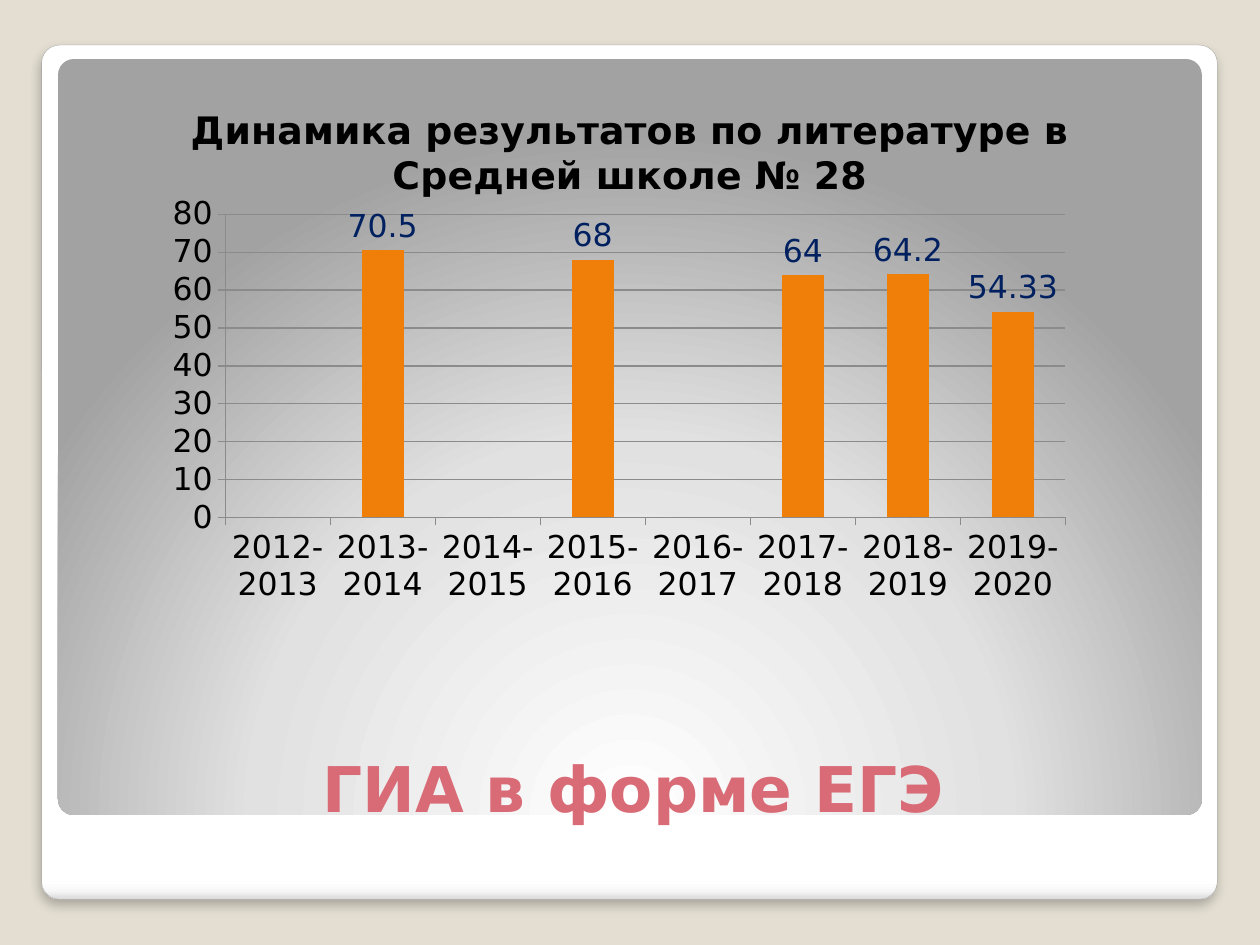
import pptx
import pptx.chart.data
import pptx.dml.color
import pptx.enum.chart
import pptx.enum.shapes
import pptx.enum.text
import pptx.oxml
import pptx.oxml.ns
import pptx.util
from pptx.util import Cm

FONT = "DejaVu Sans"
DRAWING = pptx.oxml.ns.nsdecls("a")
CHART = pptx.oxml.ns.nsdecls("c")
YEARS = [f"{year}-{year + 1}" for year in range(2012, 2020)]
SCORES = [None, 70.5, None, 68, None, 64, 64.2, 54.33]


def color(value):
    return pptx.dml.color.RGBColor.from_string(value)


def style_font(font, size, fill, bold=False):
    font.name = FONT
    font.size = pptx.util.Pt(size)
    font.bold = bold
    font.color.rgb = color(fill)


def write_text(frame, text, size=18, fill="000000", bold=False):
    para = frame.paragraphs[0]
    para.alignment = pptx.enum.text.PP_ALIGN.CENTER
    span = para.add_run()
    span.text = text
    style_font(span.font, size, fill, bold)


def add_panel(page, left, top, width, height, stops, direction):
    panel = page.shapes.add_shape(
        pptx.enum.shapes.MSO_SHAPE.ROUNDED_RECTANGLE,
        Cm(left), Cm(top), Cm(width), Cm(height))
    panel.adjustments[0] = 0.021
    panel.shadow.inherit = False
    panel.line.fill.background()
    marks = "".join(
        f'<a:gs pos="{position * 1000}"><a:srgbClr val="{shade}"/></a:gs>'
        for position, shade in stops)
    gradient = pptx.oxml.parse_xml(
        f'<a:gradFill {DRAWING} rotWithShape="1"><a:gsLst>{marks}</a:gsLst>'
        f'{direction}</a:gradFill>')
    geometry = panel._element.spPr.find(pptx.oxml.ns.qn("a:prstGeom"))
    geometry.addnext(gradient)
    return panel


def add_shadow(shape):
    effects = shape._element.spPr.find(pptx.oxml.ns.qn("a:effectLst"))
    effects.append(pptx.oxml.parse_xml(
        f'<a:outerShdw {DRAWING} blurRad="76200" dist="50800" dir="5400000" '
        'algn="t" rotWithShape="0"><a:srgbClr val="000000">'
        '<a:alpha val="25000"/></a:srgbClr></a:outerShdw>'))


def add_frame(page):
    card = add_panel(
        page, 0.84, 0.91, 23.7, 17.22,
        [(0, "FFFFFF"), (98, "FFFFFF"), (99, "F7F7F7"), (100, "DADADA")],
        '<a:lin ang="5400000" scaled="0"/>')
    card.line.color.rgb = color("A4A4A4")
    card.line.width = pptx.util.Pt(0.16)
    add_shadow(card)
    add_panel(
        page, 1.17, 1.19, 23.06, 15.24,
        [(0, "FFFFFF"), (55, "E1E1E1"), (100, "A2A2A2")],
        '<a:path path="circle"><a:fillToRect l="50000" t="175000" '
        'r="50000" b="-75000"/></a:path>')


def add_heading(page, text):
    box = page.shapes.add_textbox(Cm(1.4), Cm(13.84), Cm(22.73), Cm(2.92))
    box.text_frame.word_wrap = True
    box.text_frame.vertical_anchor = pptx.enum.text.MSO_ANCHOR.BOTTOM
    write_text(box.text_frame, text, size=36, fill="D96B77", bold=True)


def place_plot(chart, x, y, w, h):
    area = chart._chartSpace.chart.plotArea
    for layout in area.findall(pptx.oxml.ns.qn("c:layout")):
        area.remove(layout)
    modes = '<c:xMode val="edge"/><c:yMode val="edge"/>'
    sizes = "".join(f'<c:{name} val="{value}"/>'
                    for name, value in zip("xywh", (x, y, w, h)))
    area.insert(0, pptx.oxml.parse_xml(
        f'<c:layout {CHART}><c:manualLayout><c:layoutTarget val="inner"/>'
        f'{modes}{sizes}</c:manualLayout></c:layout>'))


def style_line(line):
    line.color.rgb = color("8B8B8B")
    line.width = pptx.util.Pt(0.75)


def style_axes(chart):
    for axis in (chart.category_axis, chart.value_axis):
        axis.major_tick_mark = pptx.enum.chart.XL_TICK_MARK.OUTSIDE
        axis.minor_tick_mark = pptx.enum.chart.XL_TICK_MARK.NONE
        style_line(axis.format.line)
        style_font(axis.tick_labels.font, 18, "000000")
    scale = chart.value_axis
    scale.minimum_scale, scale.maximum_scale, scale.major_unit = 0, 80, 10
    scale.has_major_gridlines = True
    style_line(scale.major_gridlines.format.line)


def add_score_chart(page, title):
    data = pptx.chart.data.CategoryChartData()
    data.categories = YEARS
    data.add_series("Series 1", SCORES)
    chart = page.shapes.add_chart(
        pptx.enum.chart.XL_CHART_TYPE.COLUMN_CLUSTERED,
        Cm(1.27), Cm(1.57), Cm(22.86), Cm(13.49), data).chart
    style_font(chart.font, 18, "000000")
    chart.has_legend = False
    chart.has_title = True
    chart.chart_title.include_in_layout = False
    write_text(chart.chart_title.text_frame, title, size=21.6, bold=True)
    style_axes(chart)
    place_plot(chart, 0.143, 0.204, 0.741, 0.453)

    plot = chart.plots[0]
    plot.gap_width = 150
    plot.vary_by_categories = False
    bars = plot.series[0]
    bars.format.fill.solid()
    bars.format.fill.fore_color.rgb = color("F07F09")
    labels = bars.data_labels
    labels.show_value = True
    labels.position = pptx.enum.chart.XL_LABEL_POSITION.OUTSIDE_END
    style_font(labels.font, 18, "002060")


def main():
    deck = pptx.Presentation()
    deck.slide_width, deck.slide_height = Cm(25.4), Cm(19.05)
    page = deck.slides.add_slide(deck.slide_layouts[6])
    page.background.fill.solid()
    page.background.fill.fore_color.rgb = color("E3DED1")
    add_frame(page)
    add_heading(page, "ГИА в форме ЕГЭ")
    add_score_chart(
        page, "Динамика результатов по литературе в Средней школе № 28")
    deck.save("out.pptx")


if __name__ == "__main__":
    main()
